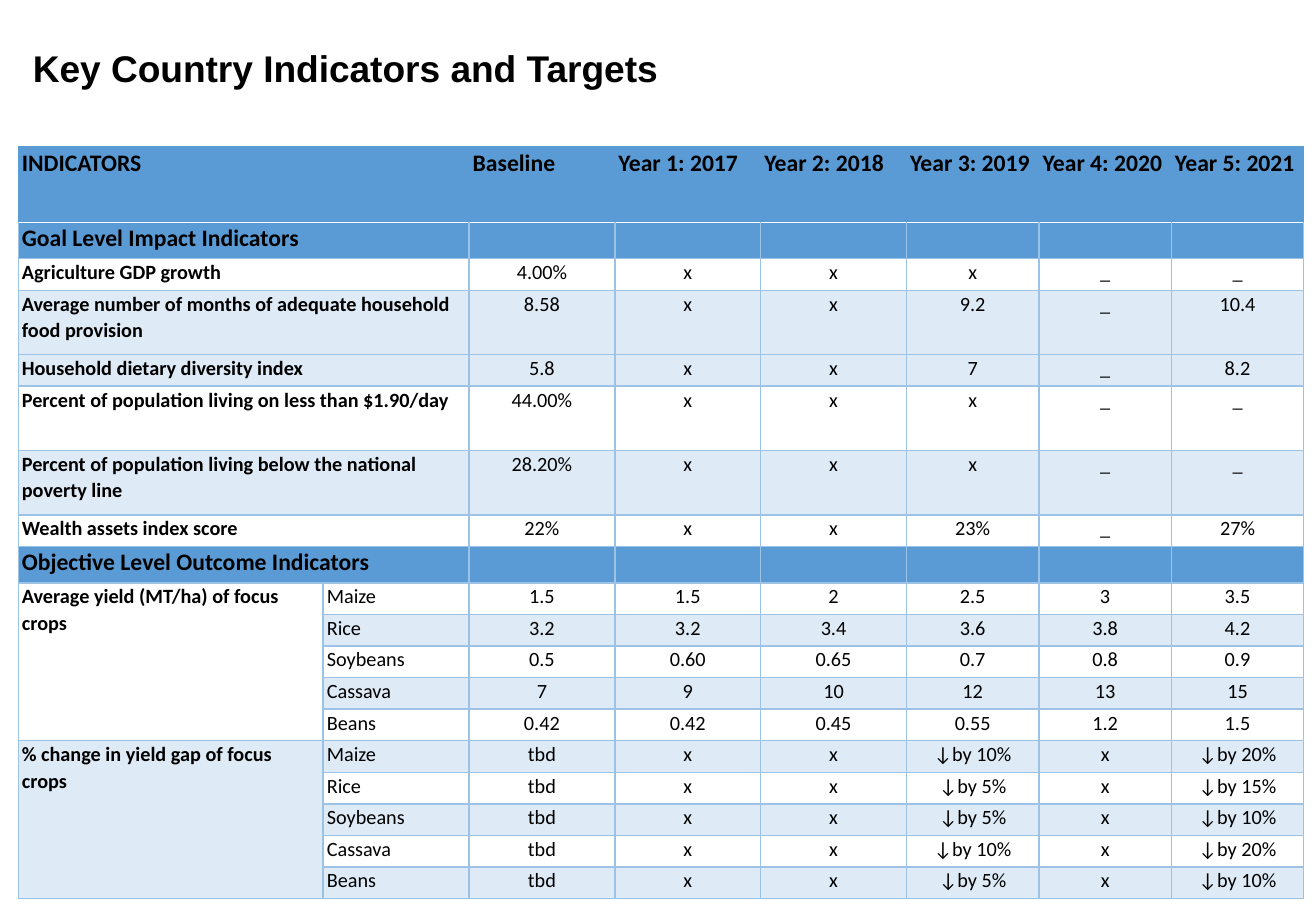
"""Build the slide of key country indicators and their yearly targets."""
import pptx
import pptx.dml.color
import pptx.enum.text
import pptx.util
import lxml.etree

Inches = pptx.util.Inches
Pt = pptx.util.Pt
Align = pptx.enum.text.PP_ALIGN
Anchor = pptx.enum.text.MSO_ANCHOR

BAND, PALE, RULE, WHITE, BLACK = "5B9BD5", "DEEAF6", "9CC2E5", "FFFFFF", "000000"
COLUMN_WIDTHS = [2.51] + [1.2] * 3 + [1.2] + [1.09] * 3
CROPS = ["Maize", "Rice", "Soybeans", "Cassava", "Beans"]
HEADINGS = ["INDICATORS", "", "Baseline", "Year 1: 2017", "Year 2: 2018",
            "Year 3: 2019", "Year 4: 2020", "Year 5: 2021"]
GOALS = [
    ("Agriculture GDP growth", "4.00% x x x _ _", 0.26, None),
    ("Average number of months of adequate household food provision",
     "8.58 x x 9.2 _ 10.4", 0.53, PALE),
    ("Household dietary diversity index", "5.8 x x 7 _ 8.2", 0.26, PALE),
    ("Percent of population living on less than $1.90/day",
     "44.00% x x x _ _", 0.53, None),
    ("Percent of population living below the national poverty line",
     "28.20% x x x _ _", 0.53, PALE),
    ("Wealth assets index score", "22% x x 23% _ 27%", 0.26, None),
]
YIELDS = ["1.5 1.5 2 2.5 3 3.5", "3.2 3.2 3.4 3.6 3.8 4.2",
          "0.5 0.60 0.65 0.7 0.8 0.9", "7 9 10 12 13 15",
          "0.42 0.42 0.45 0.55 1.2 1.5"]
GAP_CUTS = [(10, 20), (5, 15), (5, 10), (10, 20), (5, 10)]


def color(hex_value):
    return pptx.dml.color.RGBColor.from_string(hex_value)


def write(frame, text, *, size, font="Calibri", bold=False, align=Align.LEFT,
          spacing=1.07, ink=BLACK):
    paragraph = frame.paragraphs[0]
    paragraph.alignment = align
    paragraph.line_spacing = spacing
    if not text:
        paragraph._p.get_or_add_endParaRPr().set("sz", str(size * 100))
        return
    run = paragraph.add_run()
    run.text = text
    run.font.name = font
    run.font.size = Pt(size)
    run.font.bold = bold
    run.font.color.rgb = color(ink)


class IndicatorSlide:
    def __init__(self, deck):
        self.slide = deck.slides.add_slide(deck.slide_layouts[5])

    def title(self, text, left, top, width, height):
        heading = self.slide.shapes.title
        heading.left, heading.top = Inches(left), Inches(top)
        heading.width, heading.height = Inches(width), Inches(height)
        frame = heading.text_frame
        frame.margin_left = frame.margin_right = 0
        frame.margin_top = frame.margin_bottom = 0
        frame.vertical_anchor = Anchor.BOTTOM
        frame.word_wrap = True
        write(frame, text, size=22, font="Arial", bold=True, spacing=1.0)

    def table(self, left, top, widths, heights):
        grid = self.slide.shapes.add_table(
            len(heights), len(widths), Inches(left), Inches(top),
            Inches(sum(widths)), Inches(sum(heights))).table
        grid.first_row = grid.horz_banding = False
        for column, width in zip(grid.columns, widths):
            column.width = Inches(width)
        for row, height in zip(grid.rows, heights):
            row.height = Inches(height)
        return grid

    def cell(self, cell, text, fill, borders, **style):
        cell.margin_left = cell.margin_right = Inches(0.03)
        cell.margin_top = cell.margin_bottom = 0
        if fill:
            cell.fill.solid()
            cell.fill.fore_color.rgb = color(fill)
        else:
            cell.fill.background()
        properties = cell._tc.get_or_add_tcPr()
        for place, (side, hue) in enumerate(zip("LRTB", borders)):
            line = lxml.etree.Element(pptx.oxml.ns.qn(f"a:ln{side}"), w=str(Pt(1)))
            solid = lxml.etree.SubElement(line, pptx.oxml.ns.qn("a:solidFill"))
            lxml.etree.SubElement(solid, pptx.oxml.ns.qn("a:srgbClr"), val=hue)
            properties.insert(place, line)
        write(cell.text_frame, text, **style)


def indicator_rows():
    blanks = [""] * 7
    rows = [("head", HEADINGS, 0.62, BAND),
            ("band", ["Goal Level Impact Indicators"] + blanks, 0.3, BAND)]
    for label, values, height, fill in GOALS:
        rows.append(("goal", [label, ""] + values.split(), height, fill))
    rows.append(("band", ["Objective Level Outcome Indicators"] + blanks, 0.3, BAND))
    crop_values = [values.split() for values in YIELDS]
    crop_values += [["tbd", "x", "x", f"↓by {mid}%", "x", f"↓by {final}%"]
                    for mid, final in GAP_CUTS]
    labels = {0: "Average yield (MT/ha) of focus crops",
              len(CROPS): "% change in yield gap of focus crops"}
    for number, values in enumerate(crop_values):
        crop = CROPS[number % len(CROPS)]
        rows.append(("crop", [labels.get(number, ""), crop] + values, 0.26,
                     PALE if number % 2 else None))
    return rows


def main():
    deck = pptx.Presentation()
    deck.slide_width, deck.slide_height = Inches(10.83), Inches(7.5)
    page = IndicatorSlide(deck)
    page.title("Key Country Indicators and Targets", 0.27, 0.37, 8.76, 0.37)
    rows = indicator_rows()
    grid = page.table(0.15, 1.21, COLUMN_WIDTHS, [height for _, _, height, _ in rows])
    for row, (kind, texts, _, fill) in enumerate(rows):
        borders = [RULE] * 4
        if kind == "head":
            borders = [BAND, BAND, BAND, WHITE]
        elif row == 1:
            borders = [RULE, RULE, WHITE, RULE]
        heading = kind in ("head", "band")
        for column, text in enumerate(texts):
            align = Align.LEFT
            if heading:
                align = Align.JUSTIFY
            elif column > 1:
                align = Align.CENTER
            page.cell(grid.cell(row, column), text, fill, borders,
                      size=14 if heading else 12,
                      bold=heading or column == 0, align=align)
        if kind != "crop":
            grid.cell(row, 0).merge(grid.cell(row, 1))
        elif texts[0]:
            grid.cell(row, 0).merge(grid.cell(row + len(CROPS) - 1, 0))
    deck.save("out.pptx")


if __name__ == "__main__":
    main()
